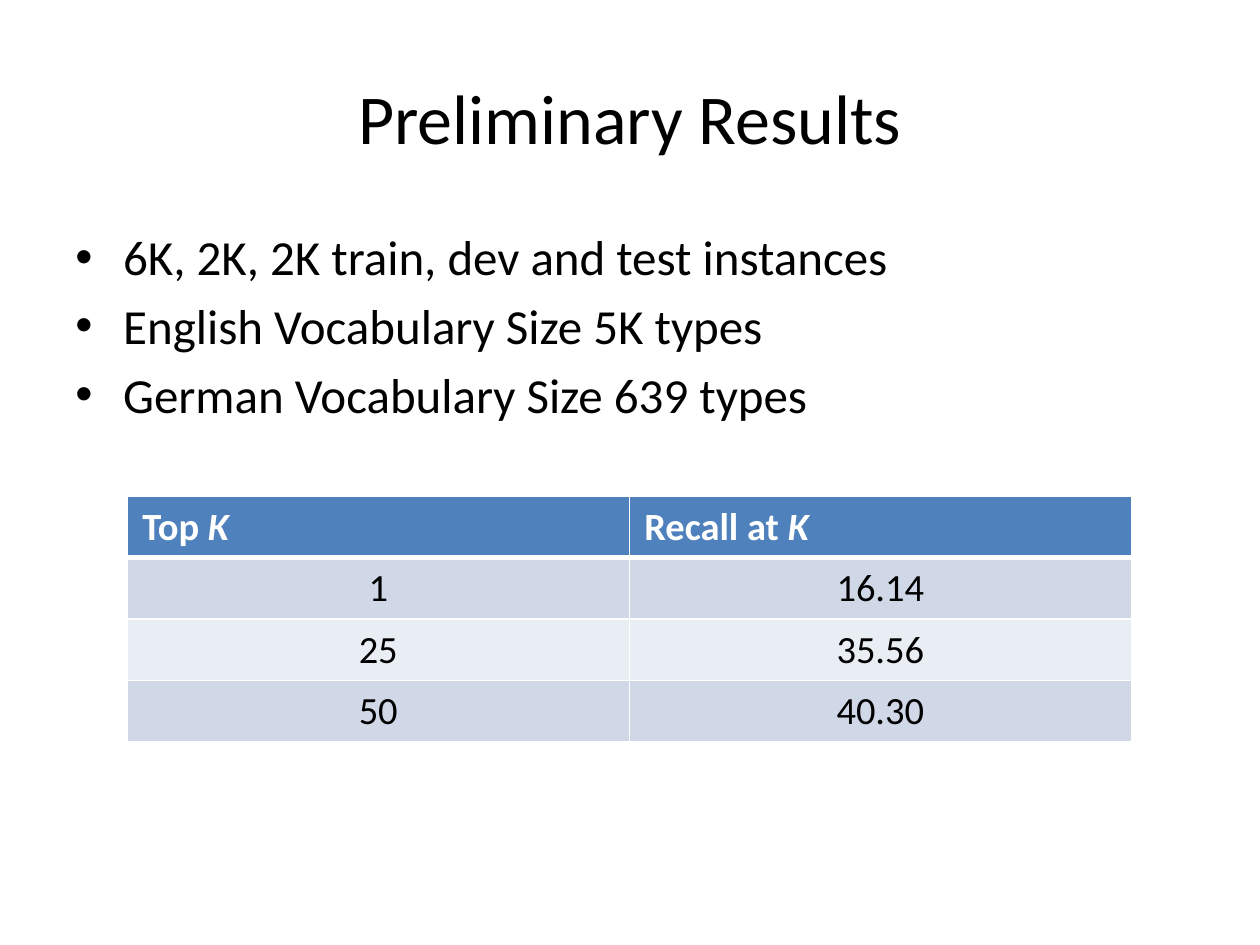
import dataclasses

import pptx
import pptx.dml.color
import pptx.enum.text
import pptx.oxml.ns
import pptx.util
from lxml import etree

Inches = pptx.util.Inches
Pt = pptx.util.Pt
Align = pptx.enum.text.PP_ALIGN
Anchor = pptx.enum.text.MSO_ANCHOR


@dataclasses.dataclass(frozen=True)
class Theme:
    font: str = "Calibri"
    text: str = "000000"
    header_text: str = "FFFFFF"
    header_fill: str = "4F81BD"
    band_fills: tuple = ("D0D8E8", "E9EDF4")
    border: str = "FFFFFF"
    title_size: int = 40
    body_size: int = 28
    table_size: int = 22
    thin_border: int = 1
    thick_border: int = 3


class SlideBuilder:
    def __init__(self, slide, theme):
        self.slide = slide
        self.theme = theme

    def format_run(self, run, size, color, bold=False, italic=False):
        font = run.font
        font.name = self.theme.font
        font.size = Pt(size)
        font.bold = bold
        font.italic = italic
        font.color.rgb = pptx.dml.color.RGBColor.from_string(color)

    def text_box(self, left, top, width, height, anchor):
        shape = self.slide.shapes.add_textbox(
            Inches(left), Inches(top), Inches(width), Inches(height))
        shape.text_frame.word_wrap = True
        shape.text_frame.vertical_anchor = anchor
        return shape.text_frame

    def title(self, text, left, top, width, height):
        text_frame = self.text_box(left, top, width, height, Anchor.MIDDLE)
        text_frame.text = text
        paragraph = text_frame.paragraphs[0]
        paragraph.alignment = Align.CENTER
        self.format_run(paragraph.runs[0], self.theme.title_size, self.theme.text)

    def bullets(self, items, left, top, width, height, indent):
        text_frame = self.text_box(left, top, width, height, Anchor.TOP)
        text_frame.text = "\n".join(items)
        for index, paragraph in enumerate(text_frame.paragraphs):
            if index:
                paragraph.space_before = Pt(self.theme.body_size * 0.2)
            properties = paragraph._p.get_or_add_pPr()
            properties.set("marL", str(Inches(indent)))
            properties.set("indent", str(Inches(-indent)))
            font = etree.SubElement(properties, pptx.oxml.ns.qn("a:buFont"))
            font.set("typeface", "Arial")
            bullet = etree.SubElement(properties, pptx.oxml.ns.qn("a:buChar"))
            bullet.set("char", "•")
            self.format_run(paragraph.runs[0], self.theme.body_size, self.theme.text)

    def cell_borders(self, cell, top, bottom):
        thin = self.theme.thin_border
        widths = {"a:lnL": thin, "a:lnR": thin, "a:lnT": top, "a:lnB": bottom}
        properties = cell._tc.get_or_add_tcPr()
        for tag, width in widths.items():
            line = etree.SubElement(properties, pptx.oxml.ns.qn(tag), w=str(Pt(width)))
            fill = etree.SubElement(line, pptx.oxml.ns.qn("a:solidFill"))
            etree.SubElement(fill, pptx.oxml.ns.qn("a:srgbClr"), val=self.theme.border)

    def cell(self, cell, row, pieces):
        theme = self.theme
        header = row == 0
        cell.margin_left = cell.margin_right = Inches(0.12)
        cell.margin_top = cell.margin_bottom = Inches(0.06)
        self.cell_borders(
            cell,
            theme.thick_border if row == 1 else theme.thin_border,
            theme.thick_border if header else theme.thin_border)
        color = theme.header_fill if header else theme.band_fills[(row - 1) % 2]
        cell.fill.solid()
        cell.fill.fore_color.rgb = pptx.dml.color.RGBColor.from_string(color)
        paragraph = cell.text_frame.paragraphs[0]
        paragraph.alignment = Align.LEFT if header else Align.CENTER
        for index, text in enumerate(pieces):
            run = paragraph.add_run()
            run.text = text
            self.format_run(
                run, theme.table_size,
                theme.header_text if header else theme.text,
                bold=header, italic=index == 1)

    def table(self, rows, left, top, width, row_height):
        frame = self.slide.shapes.add_table(
            len(rows), len(rows[0]), Inches(left), Inches(top),
            Inches(width), Inches(row_height * len(rows)))
        for row, values in enumerate(rows):
            frame.table.rows[row].height = Inches(row_height)
            for column, pieces in enumerate(values):
                self.cell(frame.table.cell(row, column), row, pieces)


def main():
    presentation = pptx.Presentation()
    presentation.slide_width = Inches(10)
    presentation.slide_height = Inches(7.5)
    slide = presentation.slides.add_slide(presentation.slide_layouts[6])
    builder = SlideBuilder(slide, Theme())

    builder.title("Preliminary Results", 0.5, 0.3, 9, 1.25)
    builder.bullets(
        ["6K, 2K, 2K train, dev and test instances",
         "English Vocabulary Size 5K types",
         "German Vocabulary Size 639 types"],
        0.5, 1.75, 9, 4.95, indent=0.38)
    results = [
        [("Top ", "K"), ("Recall at ", "K")],
        [("1",), ("16.14",)],
        [("25",), ("35.56",)],
        [("50",), ("40.30",)],
    ]
    builder.table(results, 1.01, 3.94, 7.97, 0.48)
    presentation.save("out.pptx")


if __name__ == "__main__":
    main()
